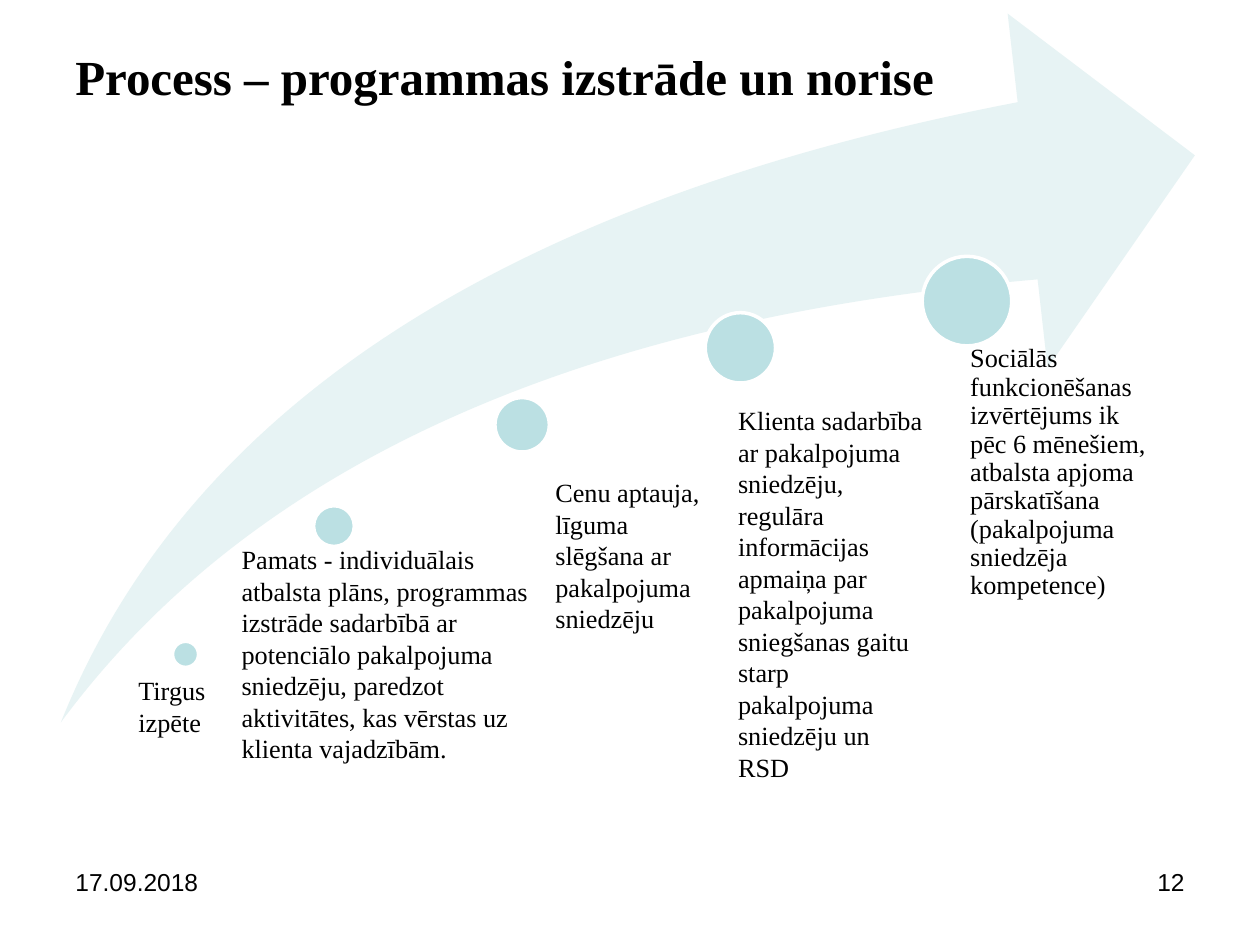
from pptx import Presentation
from pptx.dml.color import RGBColor
from pptx.enum.shapes import MSO_SHAPE
from pptx.enum.text import MSO_ANCHOR, PP_ALIGN
from pptx.util import Pt

ARROW, CIRCLE = MSO_SHAPE.SWOOSH_ARROW, MSO_SHAPE.OVAL
TOP, MIDDLE = MSO_ANCHOR.TOP, MSO_ANCHOR.MIDDLE
LEFT, RIGHT = PP_ALIGN.LEFT, PP_ALIGN.RIGHT
SERIF, SANS = "Times New Roman", "Arial"


def color(value):
    return RGBColor.from_string(value)


def add_text(text, left, top, width, height, size, font=SERIF,
             align=LEFT, anchor=TOP):
    box = slide.shapes.add_textbox(Pt(left), Pt(top), Pt(width), Pt(height))
    frame = box.text_frame
    frame.word_wrap = True
    frame.vertical_anchor = anchor
    paragraph = frame.paragraphs[0]
    paragraph.text = text
    paragraph.alignment = align
    paragraph.font.name = font
    paragraph.font.size = Pt(size)
    paragraph.font.color.rgb = color("000000")
    return frame


presentation = Presentation()
presentation.slide_width, presentation.slide_height = Pt(720), Pt(540)
slide = presentation.slides.add_slide(presentation.slide_layouts[6])

# Title
title = add_text("Process – programmas izstrāde un norise",
                 36, 21.6, 648, 44, 28, anchor=MIDDLE)
title.paragraphs[0].font.bold = True

# Rising arrow
arrow = slide.shapes.add_shape(ARROW, Pt(34.8), Pt(7.8), Pt(648), Pt(405))
arrow.adjustments[0] = 0.25
arrow.adjustments[1] = 0.25
arrow.shadow.inherit = False
arrow.fill.solid()
arrow.fill.fore_color.rgb = color("E7F3F4")
arrow.line.fill.background()

# Milestone circles: left, top, diameter
for left, top, diameter in [(98.6, 366.5, 14.9), (179.2, 289, 23.3),
                            (282.8, 227.2, 31.1), (403, 178.7, 40.2),
                            (527, 146.5, 51.2)]:
    circle = slide.shapes.add_shape(CIRCLE, Pt(left), Pt(top),
                                    Pt(diameter), Pt(diameter))
    circle.shadow.inherit = False
    circle.fill.solid()
    circle.fill.fore_color.rgb = color("BBE0E3")
    circle.line.color.rgb = color("FFFFFF")
    circle.line.width = Pt(2)

# Step descriptions: text, left, top, width, height
steps = [
    ("Tirgus izpēte", 72, 382, 82, 44),
    ("Pamats - individuālais atbalsta plāns, programmas izstrāde sadarbībā "
     "ar potenciālo pakalpojuma sniedzēju, paredzot aktivitātes, kas vērstas "
     "uz klienta vajadzībām.", 131, 307, 180, 135),
    ("Cenu aptauja, līguma\vslēgšana ar pakalpojuma sniedzēju",
     310.3, 268.6, 120.2, 98),
    ("Klienta sadarbība ar pakalpojuma sniedzēju, regulāra informācijas "
     "apmaiņa par pakalpojuma sniegšanas gaitu starp pakalpojuma sniedzēju "
     "un RSD", 414.7, 227.5, 120.2, 225.4),
]
for text, left, top, width, height in steps:
    add_text(text, left, top, width, height, 15)

# Last step, set tighter and without insets
last_step = add_text(
    "Sociālās funkcionēšanas izvērtējums ik pēc 6 mēnešiem, atbalsta apjoma "
    "pārskatīšana (pakalpojuma sniedzēja kompetence)",
    554.4, 197.3, 102.2, 337.7, 15)
last_step.margin_left = last_step.margin_right = 0
last_step.margin_top = last_step.margin_bottom = 0
last_step.paragraphs[0].line_spacing = 0.9

# Footer: date and slide number
add_text("17.09.2018", 36, 491.8, 168, 37.4, 14, SANS)
add_text("12", 516, 491.8, 168, 37.4, 14, SANS, RIGHT)

presentation.save("out.pptx")
